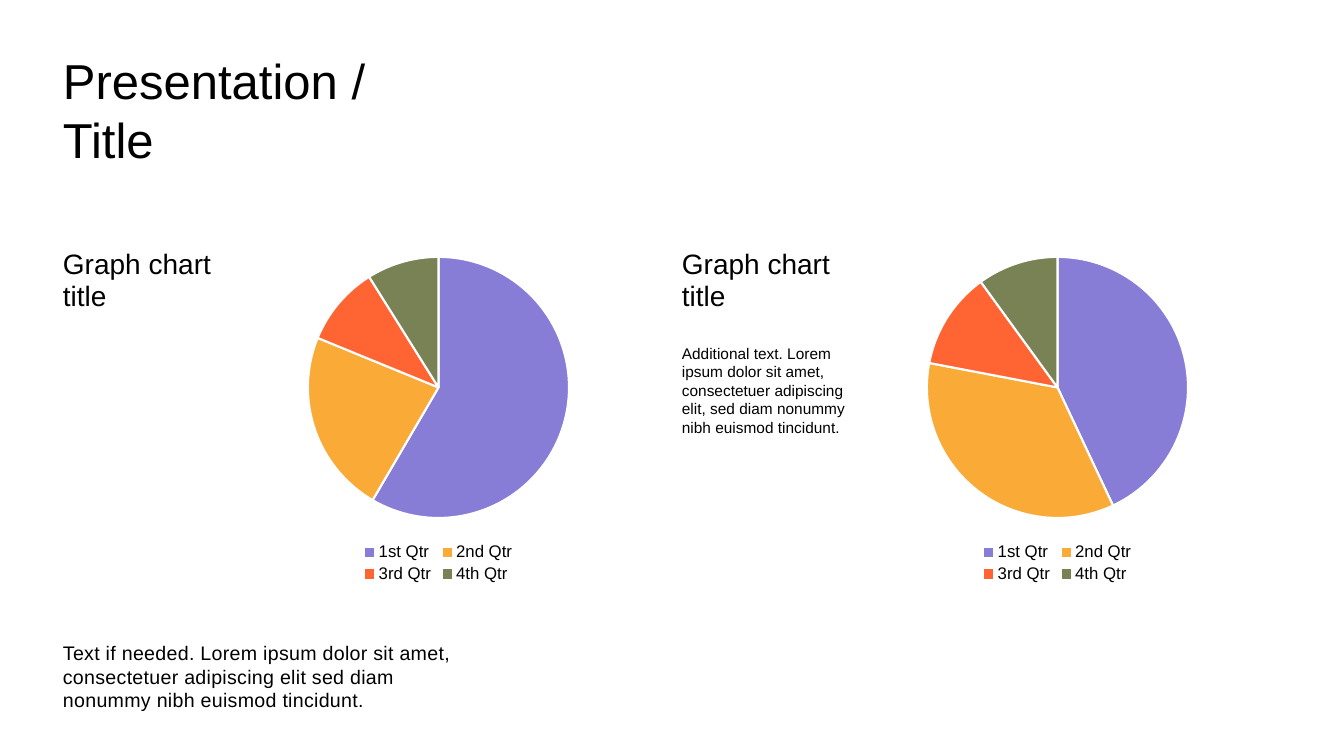
import pptx
import pptx.chart.data
import pptx.dml.color
import pptx.enum.chart
import pptx.util

EMU_PER_PX = 914400 / 100.8
QUARTERS = ["1st Qtr", "2nd Qtr", "3rd Qtr", "4th Qtr"]
SLICE_COLORS = ["877DD7", "FAAA37", "FF6432", "788255"]


def px(length):
    return pptx.util.Emu(round(length * EMU_PER_PX))


def color(value):
    return pptx.dml.color.RGBColor.from_string(value)


class ReportPage:
    typeface = "Arial"
    ink = "000000"
    paper = "FFFFFF"

    def __init__(self, page):
        self.page = page
        page.background.fill.solid()
        page.background.fill.fore_color.rgb = color(self.paper)

    def style(self, font, size):
        font.name = self.typeface
        font.size = pptx.util.Pt(size)
        font.color.rgb = color(self.ink)

    def text(self, frame, content, size, leading, tracking=0):
        box = self.page.shapes.add_textbox(*map(px, frame))
        box.text_frame.word_wrap = True
        box.text_frame.text = content
        for para in box.text_frame.paragraphs:
            para.line_spacing = pptx.util.Pt(leading)
            for span in para.runs:
                self.style(span.font, size)
                if tracking:
                    span.font._element.set("spc", str(tracking))

    def pie(self, frame, values):
        data = pptx.chart.data.CategoryChartData()
        data.categories = QUARTERS
        data.add_series("Series 1", values)
        chart = self.page.shapes.add_chart(
            pptx.enum.chart.XL_CHART_TYPE.PIE, *map(px, frame), data
        ).chart
        self.style(chart.font, 10)
        chart.has_title = False
        chart.has_legend = True
        chart.legend.position = pptx.enum.chart.XL_LEGEND_POSITION.BOTTOM
        chart.legend.include_in_layout = False
        self.style(chart.legend.font, 12)
        plot = chart.plots[0]
        plot.vary_by_categories = True
        for index, shade in enumerate(SLICE_COLORS):
            piece = plot.series[0].points[index].format
            piece.fill.solid()
            piece.fill.fore_color.rgb = color(shade)
            piece.line.color.rgb = color(self.paper)
            piece.line.width = pptx.util.Pt(1.5)


def main():
    deck = pptx.Presentation()
    deck.slide_width = px(1344)
    deck.slide_height = px(756)
    report = ReportPage(deck.slides.add_slide(deck.slide_layouts[6]))

    report.text((53, 46, 539, 139), "Presentation /\nTitle", 35, 42)
    report.text(
        (53, 636, 440, 95),
        "Text if needed. Lorem ipsum dolor sit amet, consectetuer "
        "adipiscing elit sed diam nonummy nibh euismod tincidunt.",
        14, 16.8, tracking=20,
    )
    for left, values in ((53, (59, 23, 10, 9)), (672, (43, 35, 12, 10))):
        report.text((left, 243, 196, 79), "Graph chart title", 20, 23)
        report.pie((left + 223, 243, 325, 344), values)
    report.text(
        (672, 339, 196, 111),
        "Additional text. Lorem ipsum dolor sit amet, consectetuer "
        "adipiscing elit, sed diam nonummy nibh euismod tincidunt.",
        11, 13.2,
    )
    deck.save("out.pptx")


if __name__ == "__main__":
    main()
